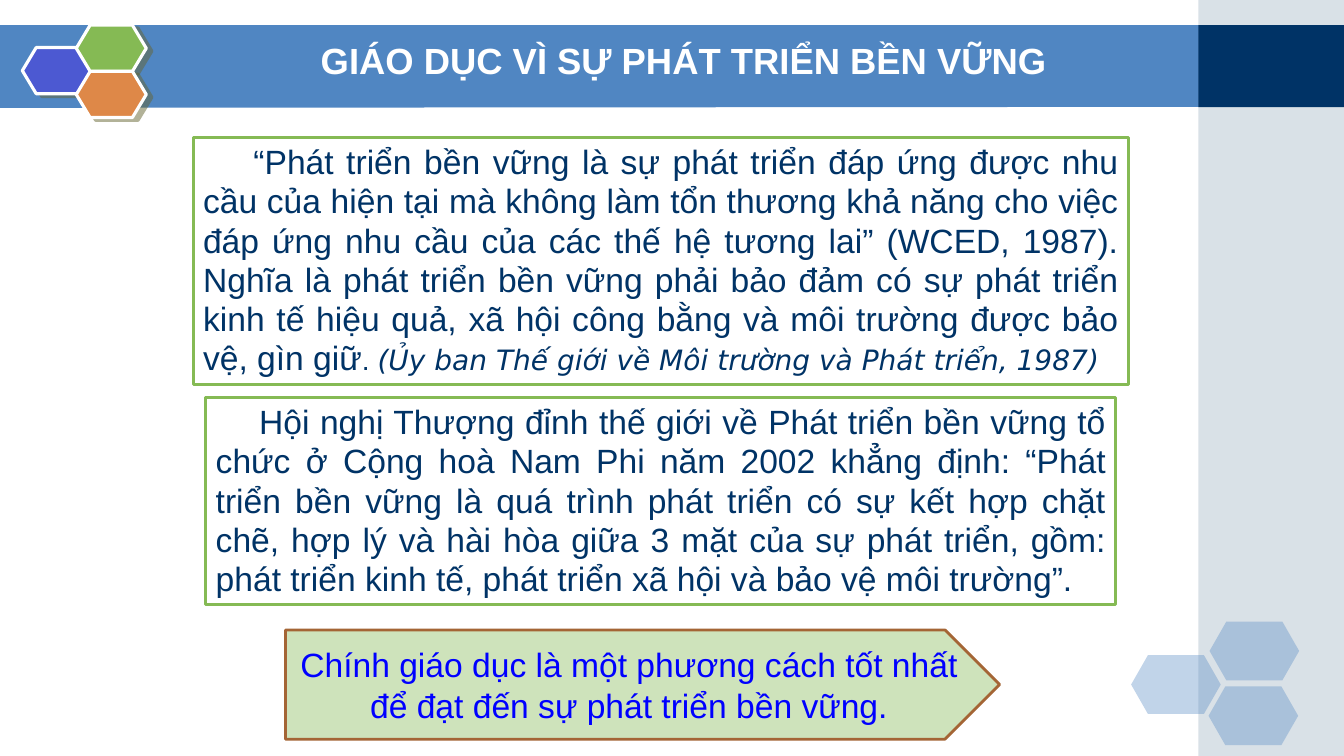
from lxml import etree
from pptx import Presentation
from pptx.dml.color import RGBColor
from pptx.enum.shapes import MSO_SHAPE as Shape
from pptx.enum.text import MSO_ANCHOR as Anchor, PP_ALIGN as Align
from pptx.oxml.ns import qn
from pptx.util import Pt

COLORS = {
    "white": "FFFFFF", "band": "5086C2", "navy": "003366", "side": "A0B5C4",
    "violet": "4C59D2", "green": "85BA54", "orange": "DE8848",
    "shadow": "666633", "pale green": "CEE3BB", "brown": "A46535", "blue": "0000FF",
}


def style_shape(shape, fill, line=None, width=2, opacity=100):
    shape.shadow.inherit = False
    shape.fill.solid()
    shape.fill.fore_color.rgb = RGBColor.from_string(COLORS[fill])
    if opacity < 100:
        color = shape.fill._xPr.find(".//" + qn("a:srgbClr"))
        etree.SubElement(color, qn("a:alpha"), val=str(opacity * 1000))
    if line:
        shape.line.color.rgb = RGBColor.from_string(COLORS[line])
        shape.line.width = Pt(width)
    else:
        shape.line.fill.background()
    return shape


def add_text(para, text, size=24, color="navy", font="Arial", bold=False, italic=False):
    span = para.add_run()
    span.text = text
    span.font.size = Pt(size)
    span.font.name = font
    span.font.bold = bold
    span.font.italic = italic
    span.font.color.rgb = RGBColor.from_string(COLORS[color])


deck = Presentation()
deck.slide_width, deck.slide_height = Pt(960), Pt(540)
page = deck.slides.add_slide(deck.slide_layouts[6])
shapes = page.shapes

# Header band and right-hand column
outline = shapes.build_freeform(Pt(-0.72), Pt(18), scale=1.0)
outline.add_line_segments(
    [(Pt(859.68), Pt(18)), (Pt(858.96), Pt(76.32)), (Pt(-0.72), Pt(77.04))], close=True)
style_shape(outline.convert_to_shape(), "band")
for top, height, fill, opacity in [(0, 540, "side", 40), (18, 58.5, "navy", 100)]:
    column = shapes.add_shape(Shape.RECTANGLE, Pt(856), Pt(top), Pt(104), Pt(height))
    style_shape(column, fill, opacity=opacity)

# Pale hexagons in the corner
for left, top in [(808, 468), (864, 444), (863.3, 490.3)]:
    hexagon = shapes.add_shape(Shape.HEXAGON, Pt(left), Pt(top), Pt(64), Pt(42))
    hexagon.adjustments[0] = 0.286
    style_shape(hexagon, "band", opacity=35)

# Coloured hexagons with a hard shadow
for left, top, fill in [(16, 34, "violet"), (54.5, 18, "green"), (54.5, 51, "orange")]:
    hexagon = shapes.add_shape(Shape.HEXAGON, Pt(left), Pt(top), Pt(50), Pt(33))
    hexagon.adjustments[0] = 0.3
    style_shape(hexagon, fill, line="white", width=2.25)
    effects = hexagon.fill._xPr.find(qn("a:effectLst"))
    shadow = etree.SubElement(effects, qn("a:outerShdw"), blurRad="0", dist=str(Pt(4.5)),
                              dir=str(27 * 60000), algn="ctr", rotWithShape="0")
    color = etree.SubElement(shadow, qn("a:srgbClr"), val=COLORS["shadow"])
    etree.SubElement(color, qn("a:alpha"), val="50000")

# Title
title = shapes.add_textbox(Pt(222), Pt(24), Pt(538), Pt(39)).text_frame
title.word_wrap = False
add_text(title.paragraphs[0], "GIÁO DỤC VÌ SỰ PHÁT TRIỂN BỀN VỮNG", size=26, color="white", bold=True)

# Quotation boxes
quotes = [
    ((138, 98, 668, 177), 36, [
        ("“Phát triển bền vững là sự phát triển đáp ứng được nhu cầu của hiện tại mà không "
         "làm tổn thương khả năng cho việc đáp ứng nhu cầu của các thế hệ tương lai” "
         "(WCED, 1987). Nghĩa là phát triển bền vững phải bảo đảm có sự phát triển kinh tế "
         "hiệu quả, xã hội công bằng và môi trường được bảo vệ, gìn giữ", {}),
        (". ", {"size": 20}),
        ("(Ủy ban Thế giới về Môi trường và Phát triển, 1987)",
         {"size": 20, "font": "DejaVu Sans", "italic": True}),
    ]),
    ((147, 283.7, 650, 148.3), 31, [
        ("Hội nghị Thượng đỉnh thế giới về Phát triển bền vững tổ chức ở Cộng hoà Nam Phi "
         "năm 2002 khẳng định: “Phát triển bền vững là quá trình phát triển có sự kết hợp "
         "chặt chẽ, hợp lý và hài hòa giữa 3 mặt của sự phát triển, gồm: phát triển kinh tế, "
         "phát triển xã hội và bảo vệ môi trường”.", {}),
    ]),
]
for bounds, indent, spans in quotes:
    box = shapes.add_shape(Shape.RECTANGLE, *map(Pt, bounds))
    style_shape(box, "white", line="green")
    box.text_frame.word_wrap = True
    box.text_frame.vertical_anchor = Anchor.TOP
    para = box.text_frame.paragraphs[0]
    para.alignment = Align.JUSTIFY
    para.line_spacing = Pt(28)
    para._p.get_or_add_pPr().set("indent", str(Pt(indent)))
    for text, look in spans:
        add_text(para, text, **look)

# Conclusion arrow
arrow = shapes.add_shape(Shape.PENTAGON, Pt(204), Pt(450), Pt(510), Pt(78))
style_shape(arrow, "pale green", line="brown")
arrow.text_frame.word_wrap = True
arrow.text_frame.vertical_anchor = Anchor.MIDDLE
para = arrow.text_frame.paragraphs[0]
para.alignment = Align.CENTER
add_text(para, "Chính giáo dục là một phương cách tốt nhất để đạt đến sự phát triển bền vững.",
         color="blue")

deck.save("out.pptx")
